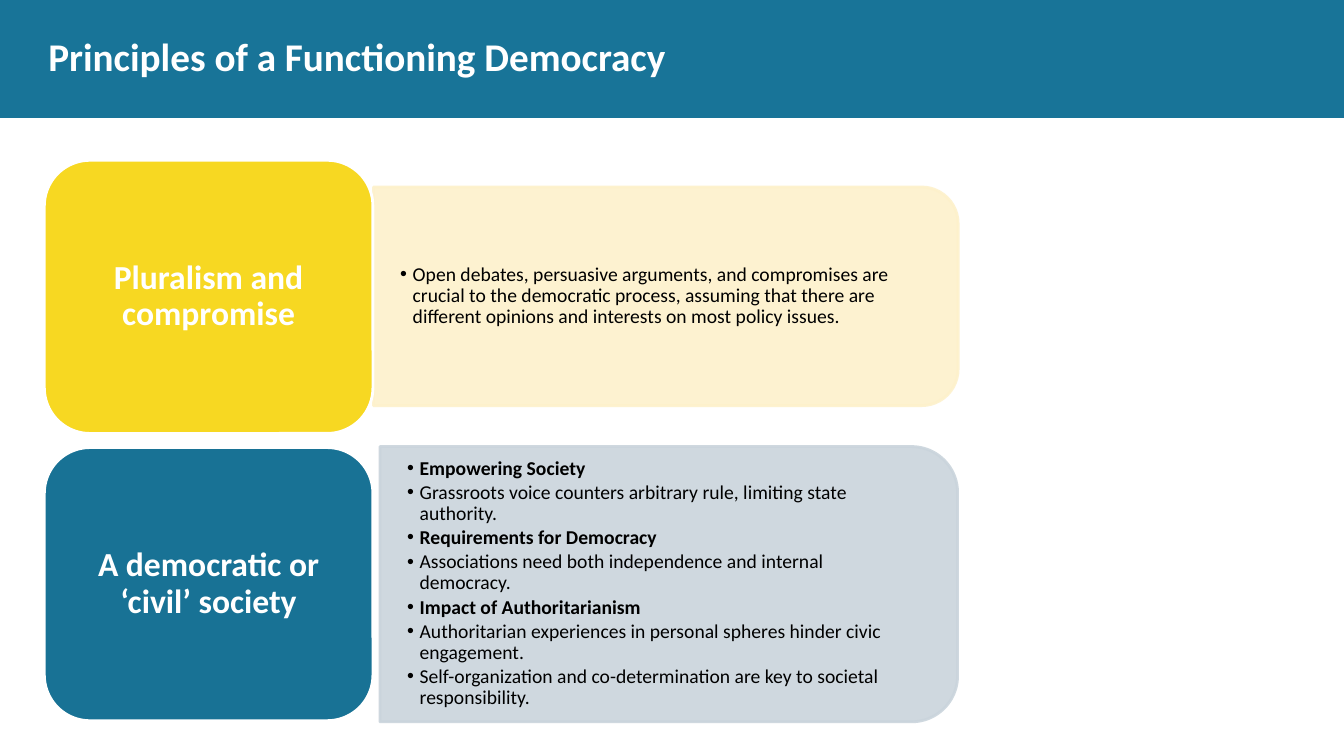
from lxml import etree
from pptx import Presentation
from pptx.dml.color import RGBColor
from pptx.enum.shapes import MSO_SHAPE
from pptx.enum.text import MSO_ANCHOR, PP_ALIGN
from pptx.oxml.ns import qn
from pptx.util import Pt

RECT = MSO_SHAPE.RECTANGLE
CARD = MSO_SHAPE.ROUNDED_RECTANGLE
PANEL = MSO_SHAPE.ROUND_2_SAME_RECTANGLE
MIDDLE = MSO_ANCHOR.MIDDLE
LEFT, CENTER = PP_ALIGN.LEFT, PP_ALIGN.CENTER

# Content: bullets are (text, bold); boxes are left, top, width, height
TITLE = "Principles of a Functioning Democracy"
PRINCIPLES = [
    {
        "name": "Pluralism and compromise",
        "card": "yellow", "tint": "cream",
        "panel": (266.8, 133.6, 417.6, 156.2),
        "text": (266.4, 141.1, 409.7, 140.4),
        "bullets": [
            ("Open debates, persuasive arguments, and compromises are crucial to the "
             "democratic process, assuming that there are different opinions and "
             "interests on most policy issues.", False),
        ],
    },
    {
        "name": "A democratic or ‘civil’ society",
        "card": "blue", "tint": "grey",
        "panel": (271.4, 319, 412.6, 196.6),
        "text": (271.4, 328.3, 403.2, 177.1),
        "bullets": [
            ("Empowering Society", True),
            ("Grassroots voice counters arbitrary rule, limiting state authority.", False),
            ("Requirements for Democracy", True),
            ("Associations need both independence and internal democracy.", False),
            ("Impact of Authoritarianism", True),
            ("Authoritarian experiences in personal spheres hinder civic engagement.", False),
            ("Self-organization and co-determination are key to societal responsibility.", False),
        ],
    },
]

COLORS = {"banner": "187498", "yellow": "F7D822", "blue": "187295", "cream": "FDF1CB",
          "grey": "CAD4DC", "white": "FFFFFF", "black": "000000"}
TITLE_FONT = {"name": "Calibri", "size": Pt(28), "bold": True}
CARD_FONT = {"name": "Calibri", "size": Pt(24), "bold": True}
BULLET_FONT = {"name": "Calibri", "size": Pt(14)}

CARD_LEFT, CARD_TOP, CARD_W, CARD_H = 31.7, 114.5, 234.7, 195.1
CARD_STEP = 205.2
CORNER = 0.167
INDENT = 9


def rgb(name):
    return RGBColor.from_string(COLORS[name])


def add_block(kind, box, fill, line=None):
    s = slide.shapes.add_shape(kind, *map(Pt, box))
    s.shadow.inherit = False
    s.fill.solid()
    s.fill.fore_color.rgb = rgb(fill)
    if line:
        s.line.color.rgb = rgb(line)
        s.line.width = Pt(2)
    else:
        s.line.fill.background()
    return s


def add_panel(box, tint):
    # The round corners sit on top, so a quarter turn moves them to the right
    x, y, w, h = box
    s = add_block(PANEL, (x + (w - h) / 2, y + (h - w) / 2, h, w), tint, tint)
    s.rotation = 90
    s.adjustments[0], s.adjustments[1] = CORNER, 0
    for clr in s._element.spPr.iter(qn("a:srgbClr")):
        etree.SubElement(clr, qn("a:alpha"), val="90000")


def set_frame(s, side, edge):
    tf = s.text_frame
    frame = {"word_wrap": True, "vertical_anchor": MIDDLE,
             "margin_left": Pt(side), "margin_right": Pt(side),
             "margin_top": Pt(edge), "margin_bottom": Pt(edge)}
    for key, value in frame.items():
        setattr(tf, key, value)
    return tf


def write(p, text, font, color, align=LEFT, spacing=0.9):
    p.alignment = align
    p.line_spacing = spacing
    r = p.add_run()
    r.text = text
    for key, value in font.items():
        setattr(r.font, key, value)
    r.font.color.rgb = rgb(color)


def add_bullet(p):
    pPr = p._p.get_or_add_pPr()
    pPr.set("marL", str(Pt(INDENT)))
    pPr.set("indent", str(-Pt(INDENT)))
    etree.SubElement(pPr, qn("a:buFont"), typeface="Arial")
    etree.SubElement(pPr, qn("a:buChar"), char="•")


prs = Presentation()
prs.slide_width, prs.slide_height = Pt(960), Pt(540)
slide = prs.slides.add_slide(prs.slide_layouts[6])

# Banner and title
add_block(RECT, (0, 0, 960, 84.3), "banner")
s = slide.shapes.add_textbox(Pt(34.6), Pt(13), Pt(897), Pt(53.3))
write(set_frame(s, 0, 0).paragraphs[0], TITLE, TITLE_FONT, "white", spacing=1.0)

# One row per principle
for row, item in enumerate(PRINCIPLES):
    # Tinted panel with bullets
    add_panel(item["panel"], item["tint"])
    tf = set_frame(slide.shapes.add_textbox(*map(Pt, item["text"])), 19.4, 10)
    for i, (text, bold) in enumerate(item["bullets"]):
        p = tf.add_paragraph() if i else tf.paragraphs[0]
        write(p, text, {**BULLET_FONT, "bold": bold}, "black")
        p.space_before = Pt(2.1 if i else 0)
        add_bullet(p)

    # Card with the name
    s = add_block(CARD, (CARD_LEFT, CARD_TOP + row * CARD_STEP, CARD_W, CARD_H),
                  item["card"], "white")
    s.adjustments[0] = CORNER
    write(set_frame(s, 16.6, 13).paragraphs[0], item["name"], CARD_FONT, "white", CENTER)

prs.save("out.pptx")
